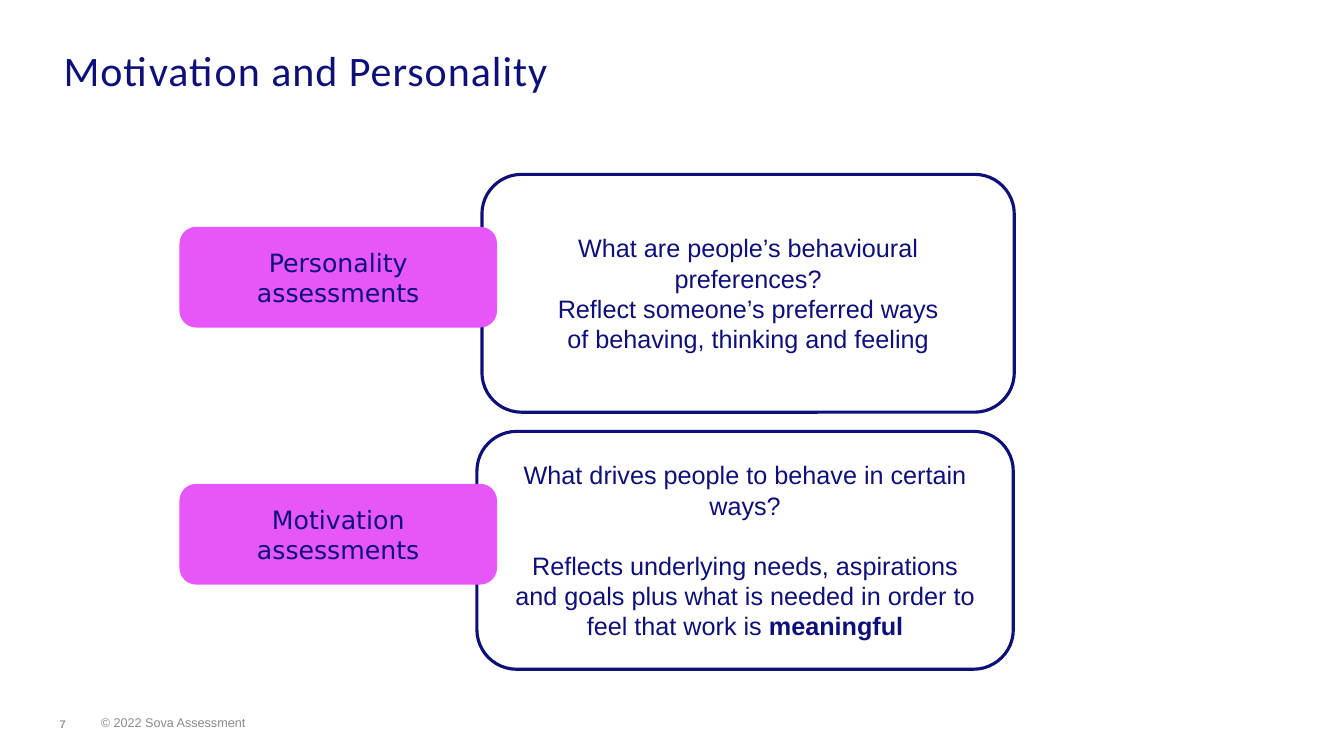
from pptx import Presentation
from pptx.dml.color import RGBColor
from pptx.enum.shapes import MSO_SHAPE
from pptx.enum.text import MSO_ANCHOR, MSO_AUTO_SIZE, PP_ALIGN
from pptx.util import Inches, Pt

COLORS = {"navy": "0E107A", "pink": "E756F9", "white": "FFFFFF",
          "footer": "8A8B8C", "number": "999A9B"}

presentation = Presentation()
presentation.slide_width = Inches(13.33)
presentation.slide_height = Inches(7.5)
slide = presentation.slides.add_slide(presentation.slide_layouts[5])


def add_run(paragraph, text, size, font, color, bold=False):
    run = paragraph.add_run()
    run.text = text
    run.font.size = Pt(size)
    run.font.name = font
    run.font.bold = bold
    run.font.color.rgb = RGBColor.from_string(COLORS[color])
    return run


def add_box(left, top, width, height, fill, line=None):
    shape = slide.shapes.add_shape(MSO_SHAPE.ROUNDED_RECTANGLE, Inches(left),
                                   Inches(top), Inches(width), Inches(height))
    shape.shadow.inherit = False
    shape.fill.solid()
    shape.fill.fore_color.rgb = RGBColor.from_string(COLORS[fill])
    if line:
        shape.line.color.rgb = RGBColor.from_string(COLORS[line])
        shape.line.width = Pt(2.25)
    else:
        shape.line.fill.background()
    shape.text_frame.word_wrap = True
    shape.text_frame.vertical_anchor = MSO_ANCHOR.MIDDLE
    return shape.text_frame


# Title
title = slide.shapes.title
title.left, title.top = Inches(0.04), Inches(0.44)
title.width, title.height = Inches(13.33), Inches(0.34)
frame = title.text_frame
frame.auto_size = MSO_AUTO_SIZE.NONE
frame.word_wrap = True
frame.vertical_anchor = MSO_ANCHOR.TOP
frame.margin_left, frame.margin_right = Inches(0.59), Inches(1.57)
frame.margin_top = frame.margin_bottom = 0
frame.paragraphs[0].alignment = PP_ALIGN.LEFT
title_run = add_run(frame.paragraphs[0], "Motivation and Personality", 30, "Calibri", "navy")
title_run.font._element.set("spc", "70")

# Assessment rows: label, row top, description left and width,
# then description paragraphs as (space before, [(text, bold)])
ROW_TOP, ROW_PITCH = 1.73, 2.55
LABEL_OFFSET = 0.52
assessments = [
    ("Personality assessments", 4.78, 5.28, [
        (0, [("What are people’s behavioural preferences?", False)]),
        (0, [("Reflect someone’s preferred ways", False)]),
        (0, [("of behaving, thinking and feeling", False)]),
    ]),
    ("Motivation assessments", 4.73, 5.32, [
        (0, [("What drives people to behave in certain ways?", False)]),
        (21.6, [("Reflects underlying needs, aspirations", False)]),
        (0, [("and goals plus what is needed in order to feel that work is ", False),
             ("meaningful", True)]),
    ]),
]
for row, (label, left, width, paragraphs) in enumerate(assessments):
    top = ROW_TOP + row * ROW_PITCH
    description = add_box(left, top, width, 2.36, "white", "navy")
    for index, (space_before, runs) in enumerate(paragraphs):
        paragraph = description.paragraphs[0] if index == 0 else description.add_paragraph()
        paragraph.alignment = PP_ALIGN.CENTER
        paragraph.space_before = Pt(space_before)
        for text, bold in runs:
            add_run(paragraph, text, 18, "Arial", "navy", bold)
    label_frame = add_box(1.78, top + LABEL_OFFSET, 3.15, 1, "pink")
    label_frame.paragraphs[0].alignment = PP_ALIGN.CENTER
    add_run(label_frame.paragraphs[0], label, 18, "DejaVu Sans", "navy")

# Footer: slide number and copyright line
footers = [
    (0, 0.98, 0.59, "7", 8, "number", True),
    (1, 1.97, 0, "© 2022 Sova Assessment", 9, "footer", False),
]
for left, width, inset, text, size, color, bold in footers:
    text_box = slide.shapes.add_textbox(Inches(left), Inches(6.91), Inches(width), Inches(0.59))
    frame = text_box.text_frame
    frame.word_wrap = True
    frame.vertical_anchor = MSO_ANCHOR.BOTTOM
    frame.margin_left, frame.margin_bottom = Inches(inset), Inches(0.37)
    frame.margin_top = frame.margin_right = 0
    add_run(frame.paragraphs[0], text, size, "Arial", color, bold)

presentation.save("out.pptx")
